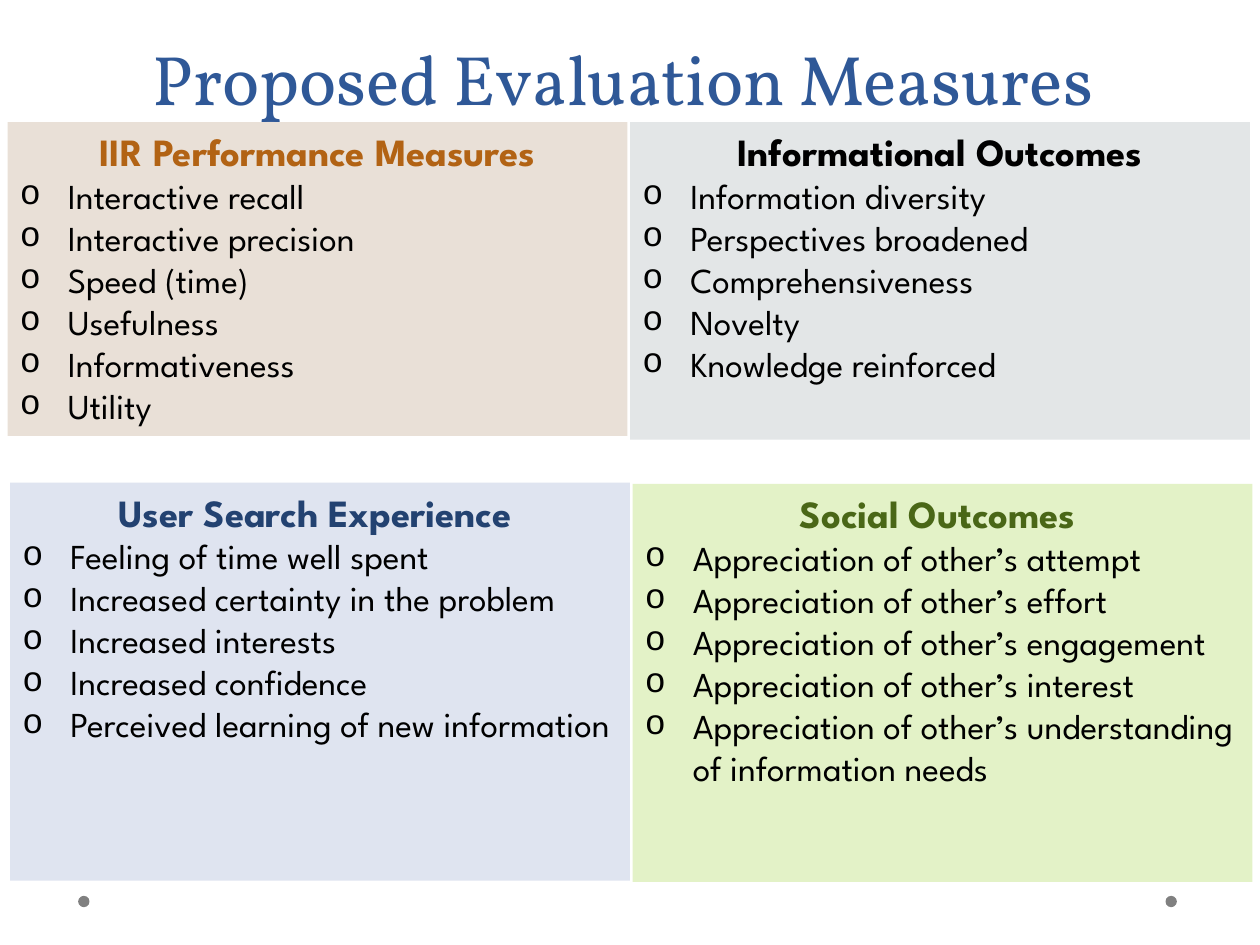
from lxml import etree
from pptx import Presentation
from pptx.dml.color import RGBColor
from pptx.enum.shapes import MSO_SHAPE
from pptx.enum.text import MSO_ANCHOR, PP_ALIGN
from pptx.oxml.ns import qn
from pptx.util import Inches, Pt

RECTANGLE, OVAL = MSO_SHAPE.RECTANGLE, MSO_SHAPE.OVAL
TOP, BOTTOM = MSO_ANCHOR.TOP, MSO_ANCHOR.BOTTOM
LEFT, CENTER = PP_ALIGN.LEFT, PP_ALIGN.CENTER

BLUE = RGBColor(0x2F, 0x58, 0x97)
BLACK = RGBColor(0x00, 0x00, 0x00)
GRAY = RGBColor(0x80, 0x80, 0x80)
ORANGE = RGBColor(0xB2, 0x63, 0x14)
NAVY = RGBColor(0x23, 0x42, 0x71)
GREEN = RGBColor(0x4A, 0x67, 0x17)
PALE_TAN = RGBColor(0xE9, 0xE0, 0xD7)
PALE_GRAY = RGBColor(0xE3, 0xE6, 0xE7)
PALE_BLUE = RGBColor(0xDF, 0xE4, 0xF0)
PALE_GREEN = RGBColor(0xE3, 0xF2, 0xC7)

TITLE_FONT, BODY_FONT, BULLET_FONT = "Vollkorn", "League Spartan", "Courier New"
PANEL_WIDTH = 4.92
DOT_SIZE = 0.09

PANELS = [
    (0.06, 0.97, 2.49, PALE_TAN, ORANGE, "IIR Performance Measures",
     ["Interactive recall", "Interactive precision", "Speed (time)",
      "Usefulness", "Informativeness", "Utility"]),
    (5, 0.97, 2.52, PALE_GRAY, BLACK, "Informational Outcomes",
     ["Information diversity", "Perspectives broadened", "Comprehensiveness",
      "Novelty", "Knowledge reinforced"]),
    (0.08, 3.83, 3.16, PALE_BLUE, NAVY, "User Search Experience ",
     ["Feeling of time well spent", "Increased certainty in the problem",
      "Increased interests", "Increased confidence",
      "Perceived learning of new information"]),
    (5.02, 3.84, 3.16, PALE_GREEN, GREEN, "Social Outcomes ",
     [f"Appreciation of other’s {item}" for item in
      ("attempt", "effort", "engagement", "interest",
       "understanding of information needs")]),
]


class SlideBuilder:
    """Draws the elements of a slide in one shared style."""

    def __init__(self, slide):
        self.slide = slide

    def add_text(self, paragraph, text, size, color, font=BODY_FONT, bold=False, align=CENTER):
        paragraph.alignment = align
        run = paragraph.add_run()
        run.text = text
        run.font.name = font
        run.font.size = Pt(size)
        run.font.bold = bold
        run.font.color.rgb = color

    def title(self, text):
        box = self.slide.shapes.add_textbox(Inches(0.5), Inches(0), Inches(9), Inches(1))
        frame = box.text_frame
        frame.word_wrap = True
        frame.vertical_anchor = BOTTOM
        paragraph = frame.paragraphs[0]
        paragraph.line_spacing = Pt(58)
        self.add_text(paragraph, text, 40, BLUE, TITLE_FONT)

    def block(self, kind, left, top, width, height, fill):
        shape = self.slide.shapes.add_shape(
            kind, Inches(left), Inches(top), Inches(width), Inches(height))
        shape.shadow.inherit = False
        shape.fill.solid()
        shape.fill.fore_color.rgb = fill
        shape.line.fill.background()
        return shape

    def dot(self, left):
        self.block(OVAL, left, 7.11, DOT_SIZE, DOT_SIZE, GRAY)

    def bullet(self, paragraph, text):
        properties = paragraph._p.get_or_add_pPr()
        properties.set("marL", str(Inches(0.38)))
        properties.set("indent", str(Inches(-0.38)))
        etree.SubElement(properties, qn("a:buFont"), typeface=BULLET_FONT)
        etree.SubElement(properties, qn("a:buChar"), char="o")
        self.add_text(paragraph, text, 20, BLACK, align=LEFT)

    def panel(self, left, top, height, fill, color, heading, items):
        frame = self.block(RECTANGLE, left, top, PANEL_WIDTH, height, fill).text_frame
        frame.word_wrap = True
        frame.vertical_anchor = TOP
        self.add_text(frame.paragraphs[0], heading, 22, color, bold=True)
        for item in items:
            self.bullet(frame.add_paragraph(), item)


def main():
    presentation = Presentation()
    presentation.slide_width = Inches(10)
    presentation.slide_height = Inches(7.5)
    builder = SlideBuilder(presentation.slides.add_slide(presentation.slide_layouts[6]))
    for left in (9.25, 0.62):
        builder.dot(left)
    builder.title("Proposed Evaluation Measures ")
    for panel in PANELS:
        builder.panel(*panel)
    presentation.save("out.pptx")


if __name__ == "__main__":
    main()
